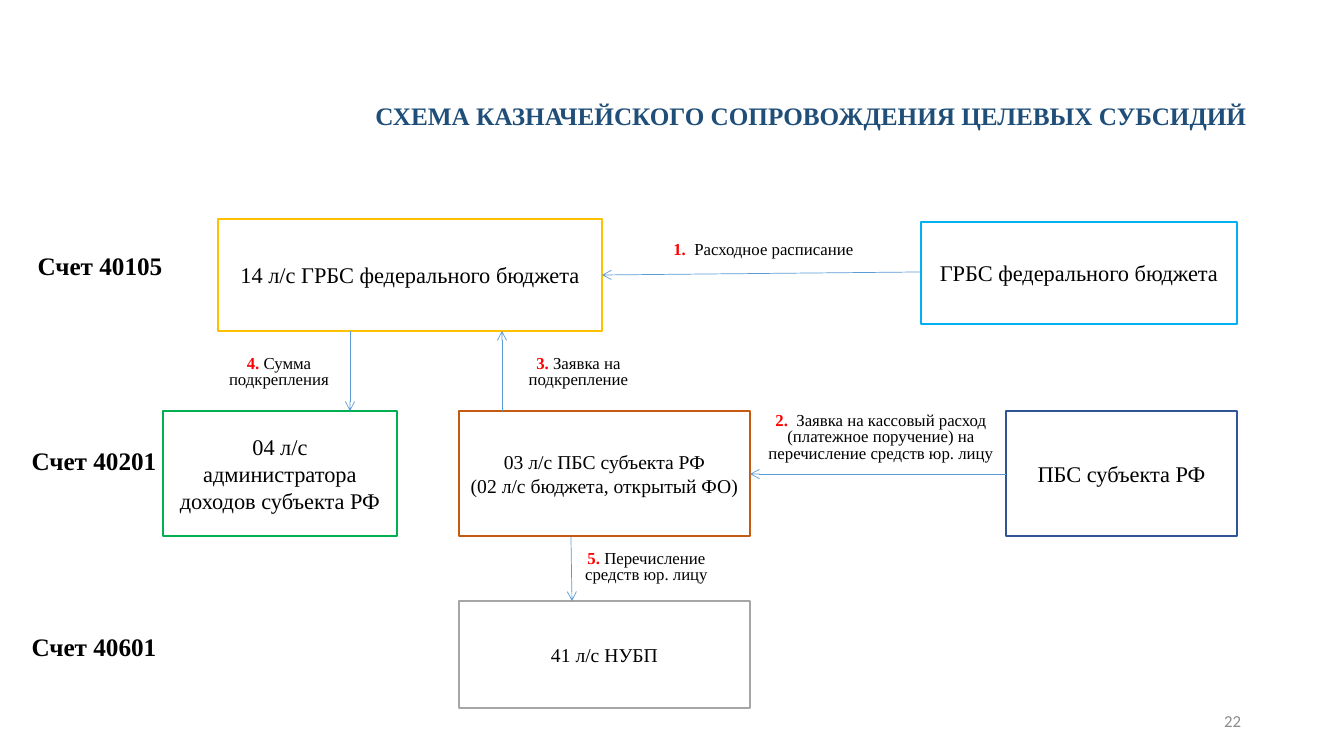
"""Builds the slide with the treasury support scheme for targeted subsidies."""
from lxml.etree import SubElement
from pptx import Presentation
from pptx.dml.color import RGBColor
from pptx.enum.shapes import MSO_CONNECTOR, MSO_SHAPE
from pptx.enum.text import MSO_ANCHOR, MSO_AUTO_SIZE, PP_ALIGN
from pptx.oxml.ns import qn
from pptx.util import Emu, Pt

BLACK = RGBColor(0x00, 0x00, 0x00)
WHITE = RGBColor(0xFF, 0xFF, 0xFF)
RED = RGBColor(0xFF, 0x00, 0x00)
NAVY = RGBColor(0x1F, 0x4E, 0x79)
BLUE = RGBColor(0x2F, 0x55, 0x97)
SKY = RGBColor(0x00, 0xB0, 0xF0)
STEEL = RGBColor(0x5B, 0x9B, 0xD5)
GREEN = RGBColor(0x00, 0xB0, 0x50)
GOLD = RGBColor(0xFF, 0xC0, 0x00)
RUST = RGBColor(0xC5, 0x5A, 0x11)
SILVER = RGBColor(0xA6, 0xA6, 0xA6)
GREY = RGBColor(0x8C, 0x8C, 0x8C)

EMU_PER_PX = 914400 / 100.8
SERIF = "Times New Roman"


def px(*lengths):
    return [Emu(round(length * EMU_PER_PX)) for length in lengths]


class Scheme:
    def __init__(self):
        self.deck = Presentation()
        self.deck.slide_width, self.deck.slide_height = px(1344, 756)
        self.slide = self.deck.slides.add_slide(self.deck.slide_layouts[5])

    def style(self, run, size, color=BLACK, bold=False, font=SERIF):
        run.font.name = font
        run.font.size = Pt(size)
        run.font.bold = bold
        run.font.color.rgb = color

    def set_text(self, frame, text, size, align=PP_ALIGN.CENTER, **look):
        frame.text = text
        for paragraph in frame.paragraphs:
            paragraph.alignment = align
            for run in paragraph.runs:
                self.style(run, size, **look)

    def title(self, text, *place):
        heading = self.slide.shapes.title
        heading.left, heading.top, heading.width, heading.height = px(*place)
        frame = heading.text_frame
        self.set_text(frame, text, 18, color=NAVY, bold=True)
        frame.word_wrap = False
        frame.auto_size = MSO_AUTO_SIZE.NONE
        frame.vertical_anchor = MSO_ANCHOR.TOP

    def box(self, text, place, outline, size=16, fill=None, bold=False):
        account = self.slide.shapes.add_shape(MSO_SHAPE.RECTANGLE, *px(*place))
        account.shadow.inherit = False
        if fill is None:
            account.fill.background()
        else:
            account.fill.solid()
            account.fill.fore_color.rgb = fill
        account.line.color.rgb = outline
        account.line.width = Pt(1)
        account.text_frame.vertical_anchor = MSO_ANCHOR.MIDDLE
        self.set_text(account.text_frame, text, size, bold=bold)

    def step(self, number, text, *place):
        frame = self.slide.shapes.add_textbox(*px(*place)).text_frame
        frame.word_wrap = True
        self.set_text(frame, number, 12, color=RED, bold=True)
        paragraph = frame.paragraphs[0]
        paragraph.line_spacing = 0.8
        action = paragraph.add_run()
        action.text = text
        self.style(action, 12)

    def arrow(self, *ends):
        flow = self.slide.shapes.add_connector(MSO_CONNECTOR.STRAIGHT, *px(*ends))
        flow.line.color.rgb = STEEL
        flow.line.width = Pt(0.5)
        properties = flow._element.spPr
        SubElement(properties.find(qn("a:ln")), qn("a:tailEnd"), type="arrow")
        SubElement(properties, qn("a:effectLst"))

    def page_number(self, text, *place):
        frame = self.slide.shapes.add_textbox(*px(*place)).text_frame
        frame.word_wrap = True
        frame.vertical_anchor = MSO_ANCHOR.MIDDLE
        self.set_text(frame, text, 12, PP_ALIGN.RIGHT, color=GREY, font="Calibri")


def main():
    scheme = Scheme()
    scheme.title("СХЕМА КАЗНАЧЕЙСКОГО СОПРОВОЖДЕНИЯ ЦЕЛЕВЫХ СУБСИДИЙ", 358, 95, 906, 40)

    for account, left, top in (
        ("Счет 40105", 15, 245),
        ("Счет 40201", 9, 440),
        ("Счет 40601", 9, 626),
    ):
        scheme.box(account, (left, top, 170, 40), WHITE, 18, WHITE, True)

    scheme.box("14 л/с ГРБС федерального бюджета", (218, 219, 384, 112), GOLD)
    scheme.box("ГРБС федерального бюджета", (921, 222, 316, 102), SKY)
    scheme.box("04 л/с администратора доходов субъекта РФ", (163, 411, 234, 125), GREEN)
    scheme.box("03 л/с ПБС субъекта РФ\n(02 л/с бюджета, открытый ФО)",
               (459, 411, 291, 125), RUST, 14)
    scheme.box("ПБС субъекта РФ", (1006, 411, 231, 125), BLUE)
    scheme.box("41 л/с НУБП", (459, 601, 291, 107), SILVER, 14, WHITE)

    scheme.step("1.  ", "Расходное расписание", 629, 238, 269, 26)
    scheme.step("2.  ", "Заявка на кассовый расход (платежное поручение) "
                "на перечисление средств юр. лицу", 750, 409, 262, 59)
    scheme.step("3. ", "Заявка на подкрепление", 495, 352, 167, 42)
    scheme.step("4. ", "Сумма подкрепления", 186, 352, 186, 42)
    scheme.step("5. ", "Перечисление средств юр. лицу", 571, 547, 151, 42)

    for ends in (
        (921, 272, 602, 275),
        (1006, 474, 750, 474),
        (502, 411, 502, 331),
        (350, 331, 350, 411),
        (571, 537, 572, 601),
    ):
        scheme.arrow(*ends)

    scheme.page_number("22", 952, 701, 299, 40)
    scheme.deck.save("out.pptx")


if __name__ == "__main__":
    main()
